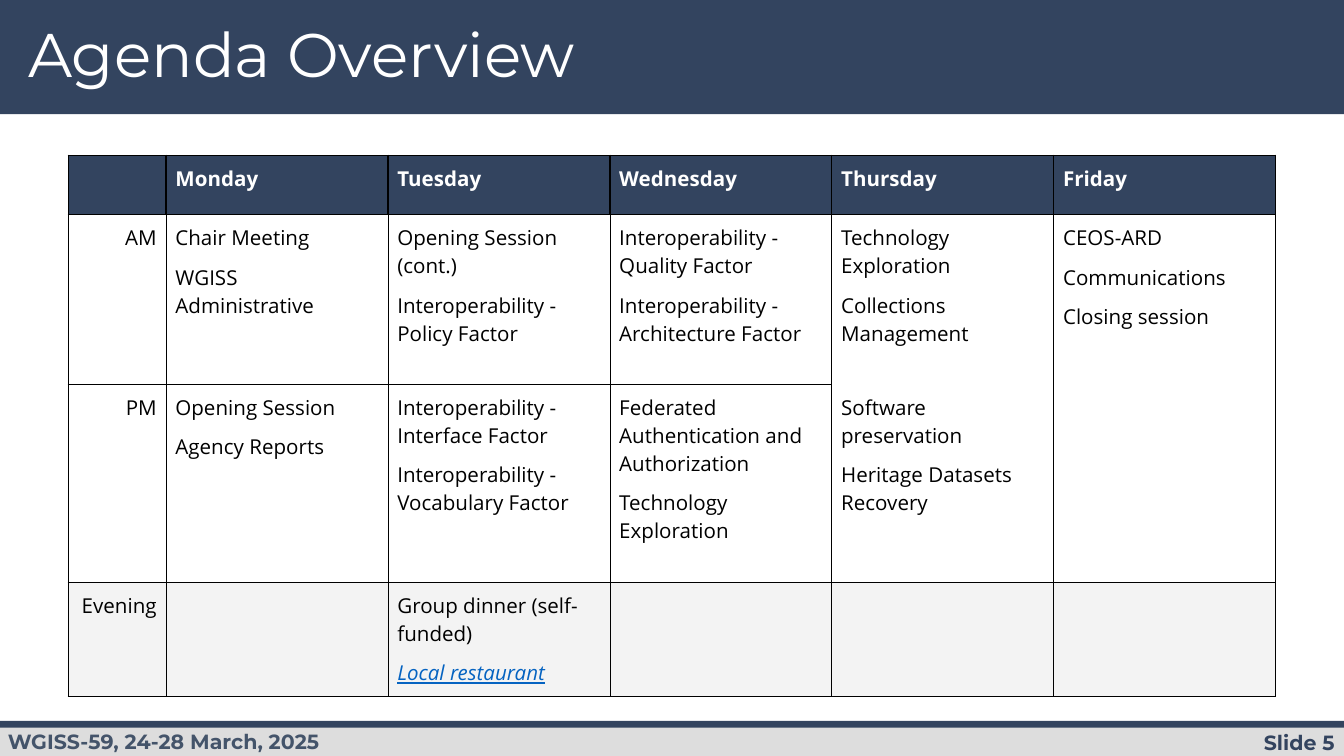
from lxml.etree import SubElement
from pptx import Presentation
from pptx.dml.color import RGBColor
from pptx.enum.shapes import MSO_SHAPE as Shape
from pptx.enum.text import MSO_ANCHOR as Anchor, PP_ALIGN as Align
from pptx.oxml.ns import qn
from pptx.util import Pt

NAVY = RGBColor(0x33, 0x44, 0x5F)
SLATE = RGBColor(0x44, 0x54, 0x6A)
SILVER = RGBColor(0xDD, 0xDD, 0xDD)
PALE = RGBColor(0xF3, 0xF3, 0xF3)
WHITE = RGBColor(0xFF, 0xFF, 0xFF)
BLACK = RGBColor(0, 0, 0)
LINK = RGBColor(0x05, 0x63, 0xC1)

DAYS = ["Monday", "Tuesday", "Wednesday", "Thursday", "Friday"]
VENUE = "Local restaurant"
SESSIONS = {
    "AM": [
        ["Chair Meeting", "WGISS Administrative"],
        ["Opening Session (cont.)", "Interoperability - Policy Factor"],
        ["Interoperability - Quality Factor", "Interoperability - Architecture Factor"],
        ["Technology Exploration", "Collections Management"],
        ["CEOS-ARD", "Communications", "Closing session"],
    ],
    "PM": [
        ["Opening Session", "Agency Reports"],
        ["Interoperability - Interface Factor", "Interoperability - Vocabulary Factor"],
        ["Federated Authentication and Authorization", "Technology Exploration"],
        ["Software preservation", "Heritage Datasets Recovery"],
        [],
    ],
    "Evening": [[], ["Group dinner (self-funded)", VENUE], [], [], []],
}
ROW_HEIGHTS = [30, 91, 106, 61]
LABEL_WIDTH, DAY_WIDTH = 52.4, 118.9
THICK, THIN = 0.75, 0.5


def write(paragraph, text, font="Open Sans", size=11, color=BLACK, bold=False,
          italic=False, underline=False, align=Align.LEFT, before=0, line=1.0):
    """Put one formatted run of text into a paragraph."""
    paragraph.alignment = align
    paragraph.space_before = Pt(before)
    paragraph.line_spacing = line
    run = paragraph.add_run()
    run.text = text
    style = run.font
    style.name, style.size, style.bold = font, Pt(size), bold
    style.italic, style.underline = italic, underline
    style.color.rgb = color


def set_borders(cell, **widths):
    """Draw the given cell edges in black and clear the others."""
    properties = cell._tc.get_or_add_tcPr()
    for edge in "LRTB":
        width = widths.get(edge, 0)
        line = SubElement(properties, qn(f"a:ln{edge}"), w=str(Pt(width)))
        if width:
            fill = SubElement(line, qn("a:solidFill"))
            SubElement(fill, qn("a:srgbClr"), val=str(BLACK))
        else:
            SubElement(line, qn("a:noFill"))


class AgendaSlide:
    """Holds the heading font and the slide being built."""

    heading_font = "Montserrat"

    def __init__(self, deck):
        """Add a title-only slide to the deck."""
        self.slide = deck.slides.add_slide(deck.slide_layouts[5])

    def band(self, top, height, color):
        """Add a full-width coloured band."""
        band = self.slide.shapes.add_shape(Shape.RECTANGLE, 0, Pt(top), Pt(720), Pt(height))
        band.shadow.inherit = False
        band.fill.solid()
        band.fill.fore_color.rgb = color
        band.line.fill.background()

    def fill_frame(self, box, text, margins, **style):
        """Write heading text into a box with the given side and top margins."""
        frame = box.text_frame
        frame.word_wrap = True
        frame.vertical_anchor = Anchor.TOP
        frame.margin_left = frame.margin_right = Pt(margins[0])
        frame.margin_top = frame.margin_bottom = Pt(margins[1])
        write(frame.paragraphs[0], text, font=self.heading_font, **style)

    def title(self, text):
        """Place the title above the bands and format it."""
        title = self.slide.shapes.title
        title.left, title.top, title.width, title.height = Pt(10.1), Pt(10.1), Pt(554.4), Pt(46.1)
        self.slide.shapes._spTree.append(title._element)
        self.fill_frame(title, text, (5, 2.9), size=33, color=WHITE, line=0.9)

    def footer(self, text, left, top, width, height, margins, **style):
        """Add a bold footer text."""
        box = self.slide.shapes.add_textbox(Pt(left), Pt(top), Pt(width), Pt(height))
        self.fill_frame(box, text, margins, bold=True, **style)

    def cell(self, cell, lines, fill=None, **style):
        """Write the lines of one agenda cell and fill it."""
        cell.margin_left = cell.margin_right = Pt(5)
        cell.margin_top = cell.margin_bottom = Pt(5)
        frame = cell.text_frame
        for index, text in enumerate(lines):
            paragraph = frame.add_paragraph() if index else frame.paragraphs[0]
            look = dict(color=LINK, italic=True, underline=True) if text == VENUE else {}
            write(paragraph, text, before=6 if index else 0, **{**style, **look})
        if fill is None:
            cell.fill.background()
        else:
            cell.fill.solid()
            cell.fill.fore_color.rgb = fill

    def agenda(self, left, top):
        """Add the agenda table."""
        last_row, last_column = len(SESSIONS), len(DAYS)
        widths = [LABEL_WIDTH] + [DAY_WIDTH] * last_column
        table = self.slide.shapes.add_table(
            last_row + 1, last_column + 1, Pt(left), Pt(top),
            Pt(sum(widths)), Pt(sum(ROW_HEIGHTS))).table
        for column, width in zip(table.columns, widths):
            column.width = Pt(width)
        for row, height in zip(table.rows, ROW_HEIGHTS):
            row.height = Pt(height)

        for index, day in enumerate([""] + DAYS):
            header = table.cell(0, index)
            set_borders(header, L=THICK, R=THICK, T=THIN, B=THICK)
            self.cell(header, [day] if day else [], NAVY, color=WHITE, bold=True)

        for r, (period, sessions) in enumerate(SESSIONS.items(), 1):
            fill = PALE if r == last_row else None
            for c, lines in enumerate([[period]] + sessions):
                open_day = c >= DAYS.index("Thursday") + 1
                slot = table.cell(r, c)
                set_borders(
                    slot,
                    L=THIN if c else THICK,
                    R=THICK if c == last_column else THIN,
                    T=0 if open_day and r == 2 else THIN if r == last_row else THICK,
                    B=0 if open_day and r == 1 else THIN if r == 2 else THICK)
                self.cell(slot, lines, fill, align=Align.LEFT if c else Align.RIGHT)


def main():
    """Build and save the agenda slide."""
    deck = Presentation()
    deck.slide_width, deck.slide_height = Pt(720), Pt(405)
    page = AgendaSlide(deck)
    page.band(0, 61.2, NAVY)
    page.band(388.1, 16.9, SILVER)
    page.band(386.2, 3.6, NAVY)
    page.footer("Slide 5", 606.2, 388.1, 113.8, 18.7, (5, 2.9), color=NAVY, align=Align.RIGHT)
    page.footer("WGISS-59, 24-28 March, 2025", -2.9, 383.8, 227.5, 28.1, (7.2, 7.2), color=SLATE)
    page.title("Agenda Overview")
    page.agenda(36.6, 83)
    deck.save("out.pptx")


if __name__ == "__main__":
    main()
